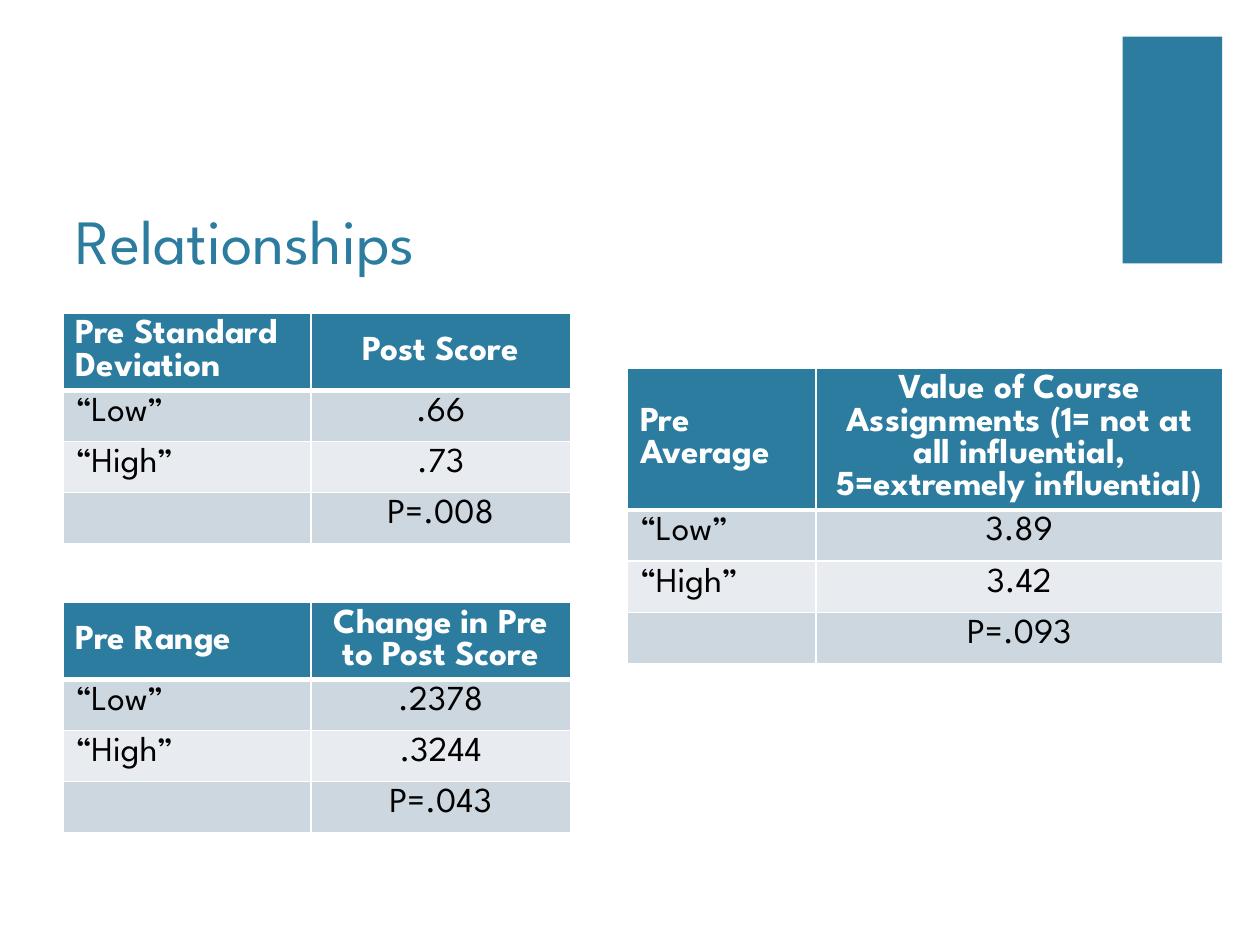
import pptx
import pptx.dml.color
import pptx.enum.shapes
import pptx.enum.text
import pptx.oxml
import pptx.oxml.ns
import pptx.util

Cm = pptx.util.Cm
Pt = pptx.util.Pt
ALIGN = pptx.enum.text.PP_ALIGN
ANCHOR = pptx.enum.text.MSO_ANCHOR

FONT = "League Spartan"
TEAL, WHITE, BLACK = "2C7C9F", "FFFFFF", "000000"
BANDS = ("CDD7DF", "E8ECF0")
BODY_ROW = 1.03


def color(value):
    return pptx.dml.color.RGBColor.from_string(value)


def write(tf, text, size=20, fill=BLACK, bold=False, align=ALIGN.LEFT):
    p = tf.paragraphs[0]
    p.alignment = align
    r = p.add_run()
    r.text = text
    r.font.name = FONT
    r.font.size = Pt(size)
    r.font.bold = bold
    r.font.color.rgb = color(fill)


def border(cell, **widths):
    tcPr = cell._tc.get_or_add_tcPr()
    for side in "LRTB":
        width = Pt(widths.get(side, 1))
        tcPr.append(pptx.oxml.parse_xml(
            f'<a:ln{side} {pptx.oxml.ns.nsdecls("a")} w="{width}">'
            f'<a:solidFill><a:srgbClr val="{WHITE}"/></a:solidFill></a:ln{side}>'))


def add_title(s, text, left, top, width, height):
    sp = s.shapes.title
    sp.left, sp.top, sp.width, sp.height = map(Cm, (left, top, width, height))
    tf = sp.text_frame
    tf.auto_size = pptx.enum.text.MSO_AUTO_SIZE.NONE
    tf.vertical_anchor = ANCHOR.BOTTOM
    write(tf, text, size=36, fill=TEAL)


def add_accent(s, left, top, width, height):
    sp = s.shapes.add_shape(pptx.enum.shapes.MSO_SHAPE.RECTANGLE,
                            Cm(left), Cm(top), Cm(width), Cm(height))
    sp.shadow.inherit = False
    sp.fill.solid()
    sp.fill.fore_color.rgb = color(TEAL)
    sp.line.fill.background()


def add_score_table(s, rows, left, top, widths, header_height, anchors):
    heights = [header_height] + [BODY_ROW] * (len(rows) - 1)
    table = s.shapes.add_table(len(rows), len(widths), Cm(left), Cm(top),
                               Cm(sum(widths)), Cm(sum(heights))).table
    for column, width in zip(table.columns, widths):
        column.width = Cm(width)
    for i, (row, height) in enumerate(zip(rows, heights)):
        table.rows[i].height = Cm(height)
        header = i == 0
        for j, text in enumerate(row):
            cell = table.cell(i, j)
            cell.vertical_anchor = anchors[j] if header else ANCHOR.TOP
            border(cell, B=3 if header else 1, T=3 if i == 1 else 1)
            cell.fill.solid()
            cell.fill.fore_color.rgb = color(TEAL if header else BANDS[(i - 1) % 2])
            if text:
                write(cell.text_frame, text, fill=WHITE if header else BLACK,
                      bold=header, align=ALIGN.CENTER if j else ALIGN.LEFT)


def score_rows(group, measure, low, high, p_value):
    return [(group, measure), ("“Low”", low), ("“High”", high), ("", p_value)]


def main():
    prs = pptx.Presentation()
    prs.slide_width, prs.slide_height = Cm(25.4), Cm(19.05)
    s = prs.slides.add_slide(prs.slide_layouts[5])

    add_accent(s, 22.63, 0.74, 2.01, 4.57)
    add_title(s, "Relationships", 1.27, 2.54, 18.08, 3.18)

    left_widths = (5, 5.23)
    add_score_table(
        s, score_rows("Pre Standard Deviation", "Post Score", ".66", ".73", "P=.008"),
        1.27, 6.31, left_widths, 1.53, (ANCHOR.TOP, ANCHOR.MIDDLE))
    add_score_table(
        s, score_rows("Pre Range", "Change in Pre to Post Score",
                      ".2378", ".3244", "P=.043"),
        1.27, 12.14, left_widths, 1.53, (ANCHOR.MIDDLE, ANCHOR.TOP))
    add_score_table(
        s, score_rows("Pre Average",
                      "Value of Course Assignments (1= not at all influential, "
                      "5=extremely influential)", "3.89", "3.42", "P=.093"),
        12.65, 7.42, (3.8, 8.2), 2.84, (ANCHOR.MIDDLE, ANCHOR.TOP))

    prs.save("out.pptx")


if __name__ == "__main__":
    main()
